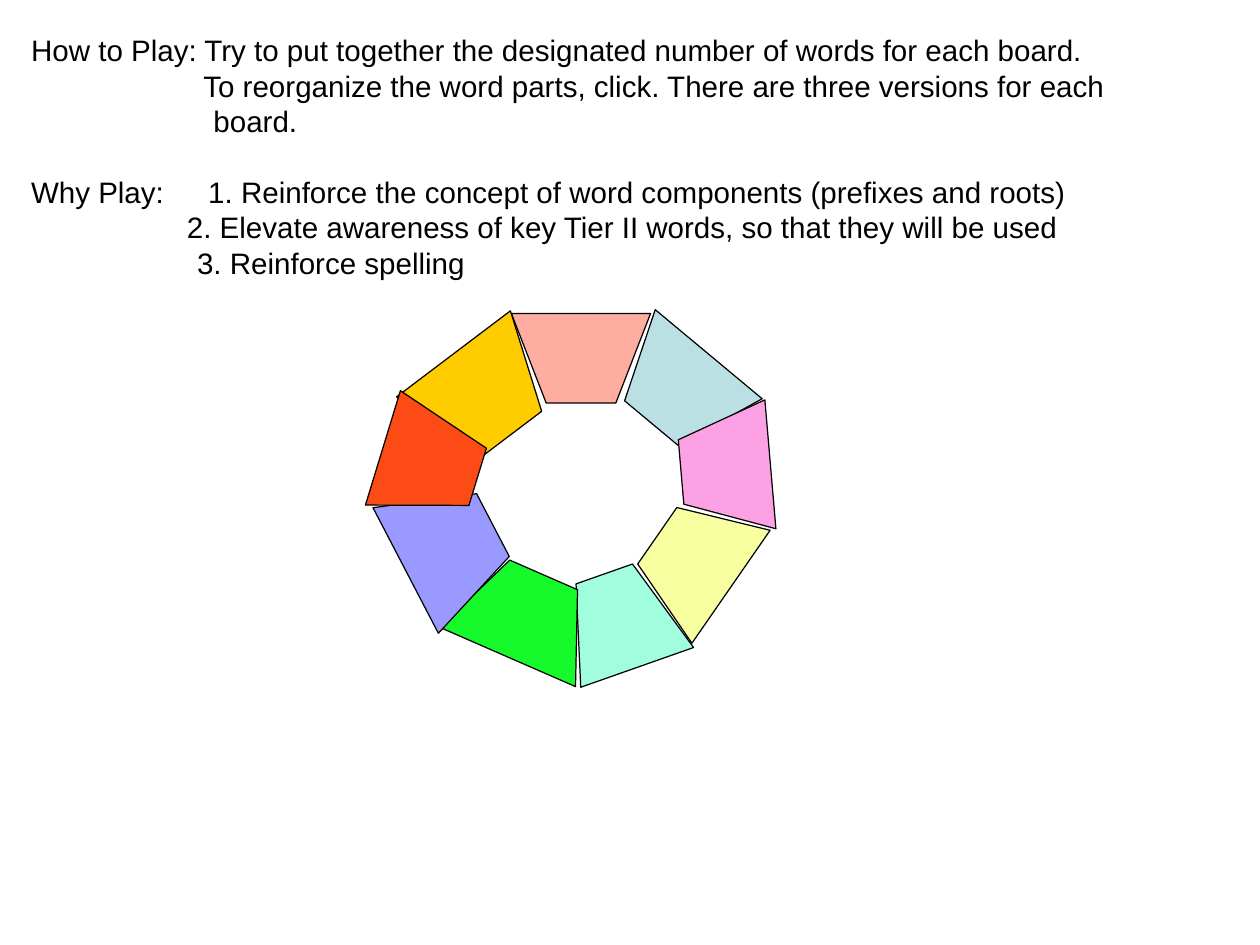
"""Build the How to Play slide with its ring of nine coloured trapezoids."""
from dataclasses import dataclass

from pptx import Presentation
from pptx.dml.color import RGBColor
from pptx.enum.shapes import MSO_SHAPE
from pptx.enum.text import MSO_ANCHOR, PP_ALIGN
from pptx.oxml.ns import qn
from pptx.util import Cm, Pt
from lxml import etree

TRAPEZOID = MSO_SHAPE.TRAPEZOID
TOP = MSO_ANCHOR.TOP
LEFT = PP_ALIGN.LEFT


@dataclass(frozen=True)
class Theme:
    font: str = "Arial"
    size: float = 24
    line_spacing: float = 28.8
    ink: RGBColor = RGBColor(0, 0, 0)
    outline: float = 1


theme = Theme()

presentation = Presentation()
presentation.slide_width = Cm(36.12)
presentation.slide_height = Cm(27.1)
slide = presentation.slides.add_slide(presentation.slide_layouts[6])

instructions = [
    (0, 0, "How to Play: Try to put together the designated number of words for each board."),
    (4.94, 0, "To reorganize the word parts, click. There are three versions for each"),
    (5.23, 0, "board."),
    (0, theme.line_spacing, "Why Play:\t1. Reinforce the concept of word components (prefixes and roots)"),
    (4.47, 0, "2. Elevate awareness of key Tier II words, so that they will be used"),
    (4.76, 0, "3. Reinforce spelling"),
]
label_tab = Cm(4.45)

text_box = slide.shapes.add_textbox(Cm(0.71), Cm(0.74), Cm(31.37), Cm(7.24))
text_frame = text_box.text_frame
text_frame.word_wrap = True
text_frame.vertical_anchor = TOP
text_frame.margin_left = text_frame.margin_right = Cm(0.18)
text_frame.margin_top = text_frame.margin_bottom = Cm(0.18)

for index, (indent, space_before, text) in enumerate(instructions):
    paragraph = text_frame.paragraphs[0] if index == 0 else text_frame.add_paragraph()
    paragraph.text = text
    paragraph.alignment = LEFT
    paragraph.line_spacing = Pt(theme.line_spacing)
    paragraph.space_before = Pt(space_before)
    properties = paragraph._p.get_or_add_pPr()
    properties.set("marL", str(Cm(indent)))
    properties.set("indent", "0")
    if "\t" in text:
        tabs = etree.SubElement(properties, qn("a:tabLst"))
        etree.SubElement(tabs, qn("a:tab"), pos=str(label_tab), algn="l")
    paragraph.font.name = theme.font
    paragraph.font.size = Pt(theme.size)
    paragraph.font.color.rgb = theme.ink

ring = [
    (14.66, 8.99, 3.99, 2.57, 0, "FEADA0"),
    (17.5, 9.86, 3.99, 2.57, 39.8, "BBE0E3"),
    (18.95, 12.14, 3.71, 2.57, 85.1, "FDA1E5"),
    (17.93, 14.81, 3.94, 2.57, 124.7, "F7FEA0"),
    (16.08, 16.38, 3.43, 2.84, 160.6, "A0FEDF"),
    (12.95, 16.38, 4.24, 2.57, 203.6, "16FA2C"),
    (10.85, 14.3, 4.06, 2.82, 242.5, "9999FF"),
    (11.81, 9.86, 4.09, 2.84, 322.9, "FFCC00"),
    (10.62, 11.84, 3.43, 2.84, 287, "FC4B14"),
]

for left, top, width, height, angle, color in ring:
    segment = slide.shapes.add_shape(TRAPEZOID, Cm(left), Cm(top), Cm(width), Cm(height))
    segment.adjustments[0] = 0.25 * width / min(width, height)
    segment.rotation = (angle + 180) % 360
    segment.shadow.inherit = False
    segment.fill.solid()
    segment.fill.fore_color.rgb = RGBColor.from_string(color)
    segment.line.color.rgb = theme.ink
    segment.line.width = Pt(theme.outline)

presentation.save("out.pptx")
